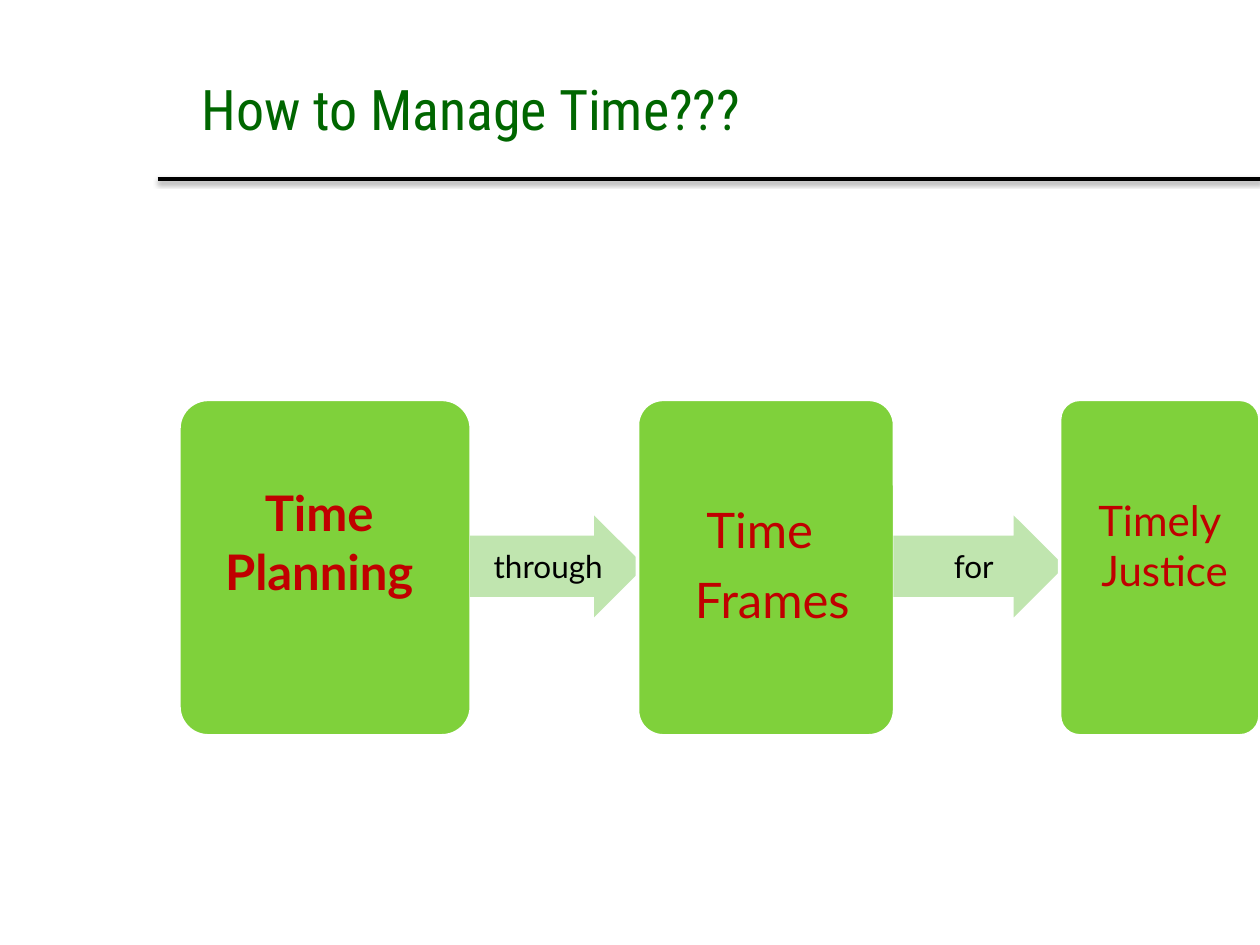
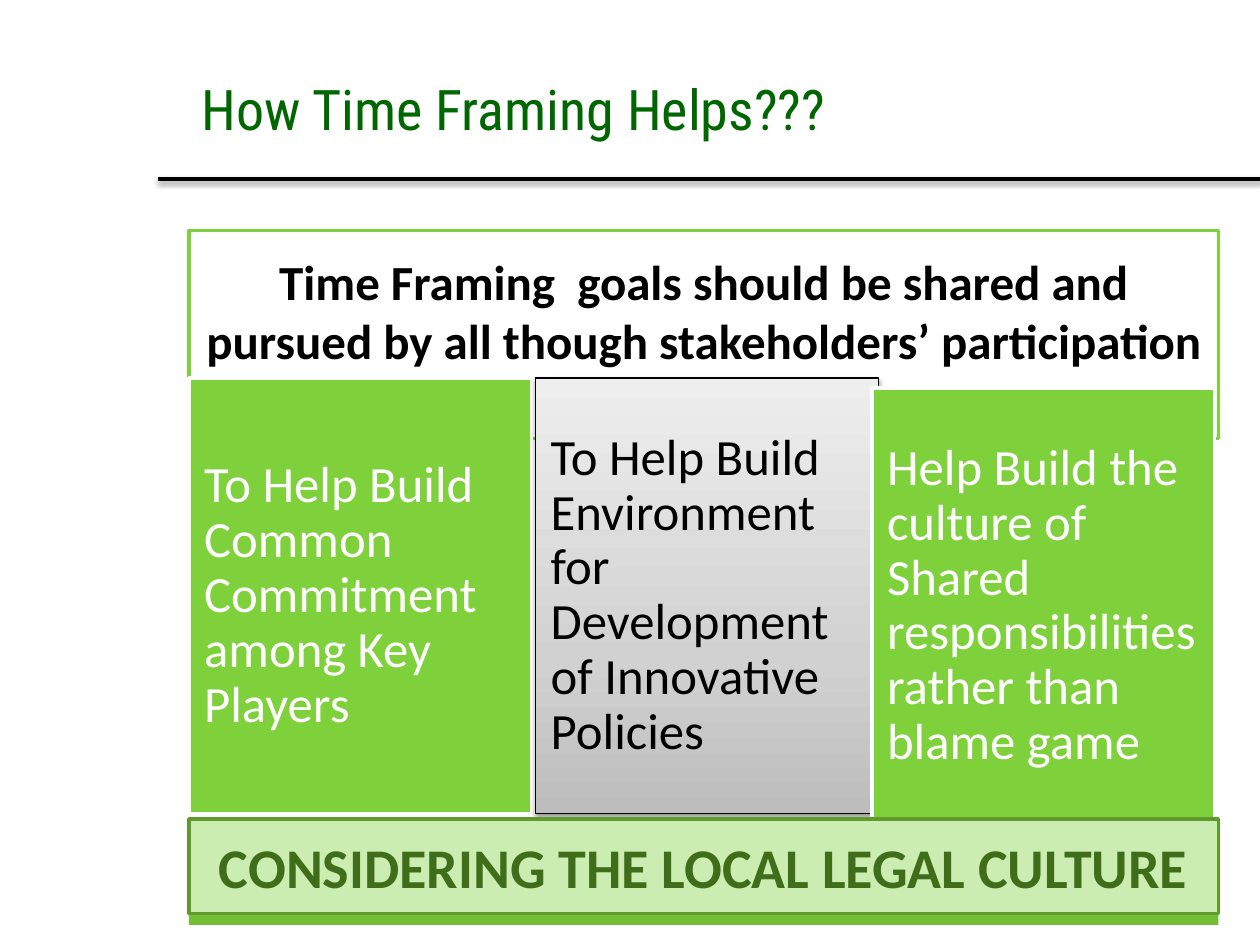
from pptx import Presentation
from pptx.dml.color import RGBColor
from pptx.enum.shapes import MSO_CONNECTOR, MSO_SHAPE
from pptx.enum.text import MSO_ANCHOR, PP_ALIGN
from pptx.oxml import parse_xml
from pptx.oxml.ns import nsdecls, qn
from pptx.util import Inches, Pt

# Shared look
BLACK = RGBColor(0x00, 0x00, 0x00)
WHITE = RGBColor(0xFF, 0xFF, 0xFF)
TITLE_GREEN = RGBColor(0x00, 0x66, 0x00)
GREEN = RGBColor(0x7F, 0xD1, 0x3B)
ARROW_GREEN = RGBColor(0xC0, 0xE5, 0xAF)
RED = RGBColor(0xC0, 0x00, 0x00)
BAND_FILL = RGBColor(0xCC, 0xED, 0xB1)
BAND_LINE = RGBColor(0x5E, 0x9B, 0x2C)
BAND_TEXT = RGBColor(0x3F, 0x6D, 0x19)
BAND_BASE = RGBColor(0x73, 0xBE, 0x36)
GREY_STOPS = [(0, "BDBDBD"), (35, "D1D1D1"), (100, "EEEEEE")]

TITLE_FONT, FLOW_FONT, BODY_FONT = "Roboto Condensed", "Lato", "Calibri"
RECTANGLE = MSO_SHAPE.RECTANGLE
ROUNDED = MSO_SHAPE.ROUNDED_RECTANGLE
ROUND_ONE = MSO_SHAPE.ROUND_1_RECTANGLE
ARROW = MSO_SHAPE.RIGHT_ARROW
STRAIGHT = MSO_CONNECTOR.STRAIGHT
LEFT, CENTER = PP_ALIGN.LEFT, PP_ALIGN.CENTER
MIDDLE = MSO_ANCHOR.MIDDLE

CONTENT_LEFT, CONTENT_WIDTH = 1.5, 8.17


def add_shadow(shape):
    """Give a line or shape a soft shadow that falls straight down."""
    properties = shape._element.spPr
    for old in properties.findall(qn("a:effectLst")):
        properties.remove(old)
    properties.append(parse_xml(
        f'<a:effectLst {nsdecls("a")}>'
        '<a:outerShdw blurRad="39400" dist="20300" dir="5400000" rotWithShape="0">'
        '<a:srgbClr val="000000"><a:alpha val="38000"/></a:srgbClr>'
        '</a:outerShdw></a:effectLst>'))


def fill_gradient(shape, stops):
    """Fill from bottom to top through (percent, colour) stops."""
    shape.fill.gradient()
    properties = shape._element.spPr
    stop_xml = "".join(
        f'<a:gs pos="{percent * 1000}"><a:srgbClr val="{color}"/></a:gs>'
        for percent, color in stops)
    properties.replace(properties.find(qn("a:gradFill")), parse_xml(
        f'<a:gradFill rotWithShape="1" {nsdecls("a")}><a:gsLst>{stop_xml}</a:gsLst>'
        '<a:lin ang="16200000" scaled="0"/></a:gradFill>'))


def add_block(slide, kind, box, fill=None, line=None, line_width=2):
    shape = slide.shapes.add_shape(kind, *map(Inches, box))
    shape.shadow.inherit = False
    if fill is not None:
        shape.fill.solid()
        shape.fill.fore_color.rgb = fill
    if line is None:
        shape.line.fill.background()
    else:
        shape.line.color.rgb = line
        shape.line.width = Pt(line_width)
    return shape


def write_text(shape, lines, font, size, color, bold=False, align=CENTER,
               insets=(0.12, 0.12, 0.12, 0.12), tight=False):
    """Write one paragraph per line; insets are left, top, right, bottom."""
    frame = shape.text_frame
    frame.word_wrap = True
    frame.vertical_anchor = MIDDLE
    (frame.margin_left, frame.margin_top,
     frame.margin_right, frame.margin_bottom) = map(Inches, insets)
    for index, line in enumerate(lines):
        paragraph = frame.paragraphs[0] if index == 0 else frame.add_paragraph()
        paragraph.alignment = align
        if tight:
            paragraph.line_spacing = 0.9
            paragraph.space_after = Pt(round(size * 0.35, 1))
        run = paragraph.add_run()
        run.text = line
        run.font.name = font
        run.font.size = Pt(size)
        run.font.bold = bold
        run.font.color.rgb = color


def add_titled_slide(presentation, title):
    slide = presentation.slides.add_slide(presentation.slide_layouts[6])
    rule = slide.shapes.add_connector(
        STRAIGHT, Inches(1.25), Inches(1.42), Inches(10), Inches(1.42))
    rule.line.color.rgb = BLACK
    rule.line.width = Pt(2)
    add_shadow(rule)
    title_box = slide.shapes.add_textbox(
        Inches(CONTENT_LEFT), Inches(0.3), Inches(CONTENT_WIDTH), Inches(1.12))
    write_text(title_box, [title], TITLE_FONT, 32, TITLE_GREEN, align=LEFT,
               insets=(0.1, 0.05, 0.1, 0.05))
    return slide


def add_step(slide, left, width, lines, size, **text_options):
    step = add_block(slide, ROUNDED, (left, 3.17, width, 2.67), GREEN, WHITE)
    step.adjustments[0] = 0.1
    write_text(step, lines, FLOW_FONT, size, RED, **text_options)


def add_step_arrow(slide, left, width, label):
    arrow = add_block(slide, ARROW, (left, 4.09, width, 0.81), ARROW_GREEN)
    arrow.adjustments[0] = 0.6
    arrow.adjustments[1] = 0.5
    # The left inset centres the label on the whole arrow
    write_text(arrow, [label], FLOW_FONT, 18, BLACK, insets=(0.16, 0, 0, 0))


def build_flow_slide(presentation):
    slide = add_titled_slide(presentation, "How to Manage Time???")
    add_step(slide, 1.42, 2.32, ["Time ", "Planning "], 28, bold=True,
             insets=(0.12, 0.12, 0.12, 0.54))
    add_step_arrow(slide, 3.73, 1.39, "through ")
    add_step(slide, 5.06, 2.04, ["Time ", " Frames"], 28, tight=True)
    add_step_arrow(slide, 7.09, 1.36, "for")
    add_step(slide, 8.41, 1.59, ["Timely", " Justice"], 24,
             insets=(0.1, 0.1, 0.1, 0.46))


def add_benefit(slide, left, top, text, grey=False):
    box = (left, top, 2.72, 3.46)
    if grey:
        panel = add_block(slide, RECTANGLE, box, line=BLACK, line_width=0.75)
        fill_gradient(panel, GREY_STOPS)
        add_shadow(panel)
    else:
        panel = add_block(slide, RECTANGLE, box, GREEN, WHITE)
    write_text(panel, [text], BODY_FONT, 29, BLACK if grey else WHITE,
               align=LEFT, tight=True)


def build_benefits_slide(presentation):
    slide = add_titled_slide(presentation, "How Time Framing Helps???")

    # Shared goal above the three benefits
    goal = add_block(slide, RECTANGLE, (CONTENT_LEFT, 1.83, CONTENT_WIDTH, 1.65),
                     WHITE, GREEN)
    write_text(goal, ["Time Framing  goals should be shared and pursued by all "
                      "though stakeholders’ participation"],
               BODY_FONT, 28, BLACK, bold=True, insets=(0.12, 0.12, 0.12, 0.51))

    add_benefit(slide, 1.5, 3, "To Help Build Common Commitment among Key Players")
    add_benefit(slide, 4.25, 3, "To Help Build Environment for Development of "
                "Innovative Policies", grey=True)
    add_benefit(slide, 6.92, 3.08, "Help Build the culture of Shared "
                "responsibilities rather than blame game")

    # Closing band on its darker base
    add_block(slide, ROUND_ONE, (CONTENT_LEFT, 6.95, CONTENT_WIDTH, 0.39), BAND_BASE)
    band = add_block(slide, RECTANGLE, (CONTENT_LEFT, 6.5, CONTENT_WIDTH, 0.75),
                     BAND_FILL, BAND_LINE)
    write_text(band, ["CONSIDERING THE LOCAL LEGAL CULTURE"], BODY_FONT, 32,
               BAND_TEXT, bold=True, insets=(0.1, 0.05, 0.1, 0.05))


def main():
    presentation = Presentation()
    presentation.slide_width = Inches(10)
    presentation.slide_height = Inches(7.5)
    build_flow_slide(presentation)
    build_benefits_slide(presentation)
    presentation.save("out.pptx")


if __name__ == "__main__":
    main()
